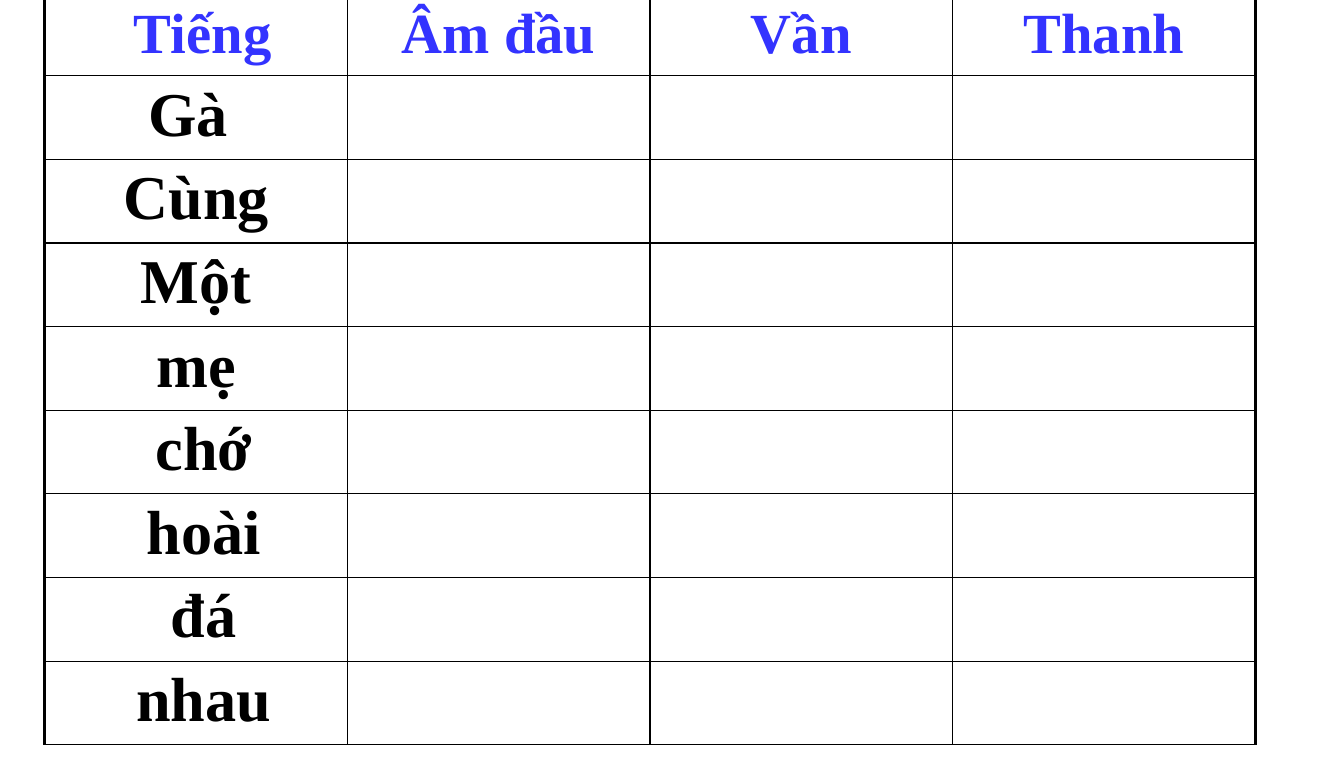
from dataclasses import dataclass

from lxml.etree import SubElement
from pptx import Presentation
from pptx.dml.color import RGBColor
from pptx.enum.text import PP_ALIGN
from pptx.oxml import parse_xml
from pptx.oxml.ns import nsdecls, qn
from pptx.table import _Cell
from pptx.util import Inches, Pt

COLORS = {"header": "3333FF", "word": "000000", "border": "000000"}
FONT = "Times New Roman"
THIN, THICK = 1, 2.25
COL_WIDTH, HEADER_HEIGHT, WORD_HEIGHT = 3.04, 0.78, 0.84


@dataclass
class TextStyle:
    size: int
    color: str


HEADER = TextStyle(41, COLORS["header"])
WORD = TextStyle(45, COLORS["word"])

HEADINGS = [" Tiếng", "Âm đầu", "Vần", "Thanh"]
WORDS = ["Gà ", "Cùng", "Một", "mẹ", " chớ", " hoài", " đá", " nhau"]


def write_text(cell: _Cell, text: str, style: TextStyle) -> None:
    p = cell.text_frame.paragraphs[0]
    p.alignment = PP_ALIGN.CENTER
    spacing = SubElement(p._p.get_or_add_pPr(), qn("a:spcBef"))
    SubElement(spacing, qn("a:spcPct")).set("val", "20000")
    r = p.add_run()
    r.text = text
    r.font.name = FONT
    r.font.size = Pt(style.size)
    r.font.bold = True
    r.font.color.rgb = RGBColor.from_string(style.color)


def set_borders(cell: _Cell, widths: dict[str, float]) -> None:
    tc_pr = cell._tc.get_or_add_tcPr()
    for i, (side, width) in enumerate(widths.items()):
        tc_pr.insert(i, parse_xml(
            f'<a:ln{side} {nsdecls("a")} w="{int(Pt(width))}"><a:solidFill>'
            f'<a:srgbClr val="{COLORS["border"]}"/></a:solidFill></a:ln{side}>'))


def format_cell(cell: _Cell, row: int, col: int) -> None:
    cell.margin_left = cell.margin_right = Inches(0.14)
    cell.margin_top = cell.margin_bottom = Inches(0.05)
    cell.fill.background()
    set_borders(cell, {
        "L": THICK if col == 0 else THIN,
        "R": THICK if col == len(HEADINGS) - 1 else THIN,
        "T": THICK if row == 0 else THIN,
        "B": THIN,
    })


def main() -> None:
    prs = Presentation()
    prs.slide_width, prs.slide_height = Inches(13.5), Inches(7.6)
    slide = prs.slides.add_slide(prs.slide_layouts[6])

    # Table grid
    heights = [HEADER_HEIGHT] + [WORD_HEIGHT] * len(WORDS)
    table = slide.shapes.add_table(
        len(heights), len(HEADINGS), Inches(0.45), Inches(-0.02),
        Inches(COL_WIDTH * len(HEADINGS)), Inches(sum(heights))).table
    table.first_row = table.horz_banding = False
    for column in table.columns:
        column.width = Inches(COL_WIDTH)
    for row, height in zip(table.rows, heights):
        row.height = Inches(height)
    for i, row in enumerate(table.rows):
        for j, cell in enumerate(row.cells):
            format_cell(cell, i, j)

    # Headings across the top, words down the first column
    for j, heading in enumerate(HEADINGS):
        write_text(table.cell(0, j), heading, HEADER)
    for i, word in enumerate(WORDS, start=1):
        write_text(table.cell(i, 0), word, WORD)

    prs.save("out.pptx")


if __name__ == "__main__":
    main()
